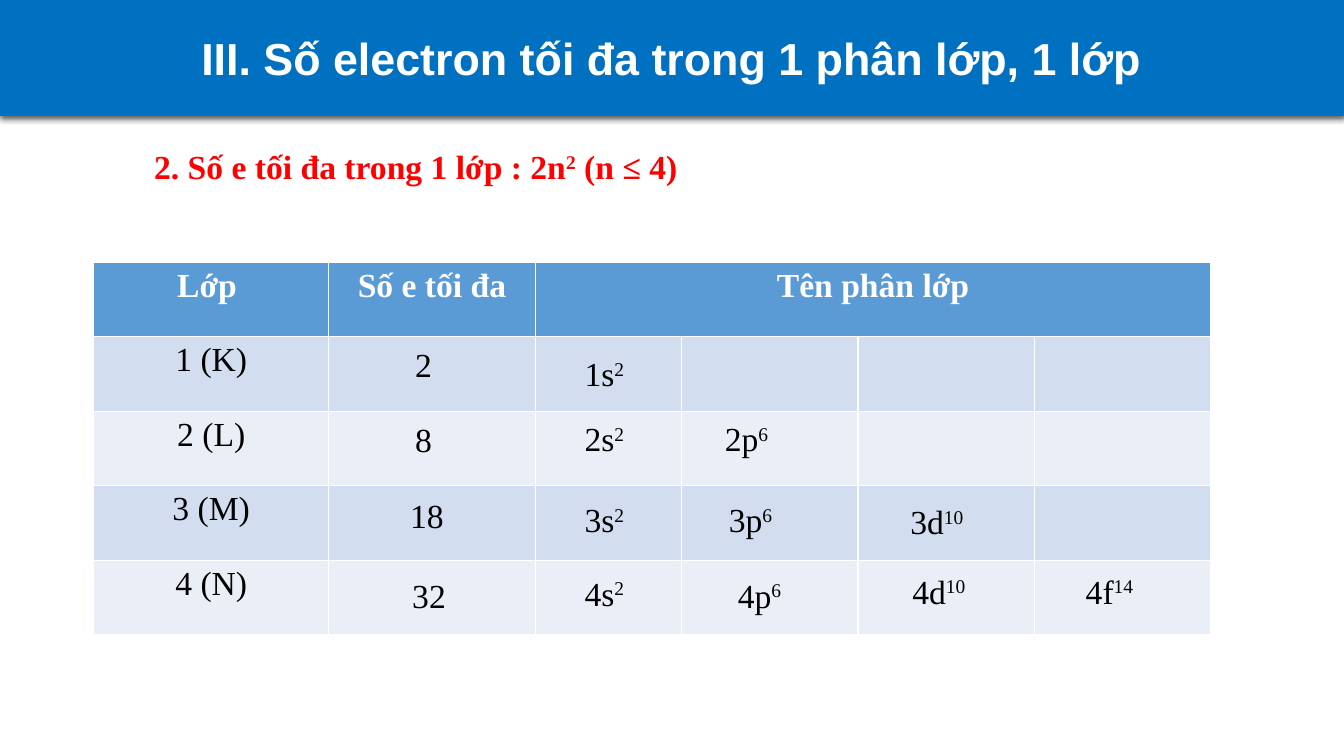
"""Build a slide on the maximum number of electrons in each shell."""
from lxml import etree
from pptx import Presentation
from pptx.dml.color import RGBColor
from pptx.enum.shapes import MSO_SHAPE
from pptx.enum.text import MSO_ANCHOR, MSO_AUTO_SIZE, PP_ALIGN
from pptx.oxml import parse_xml
from pptx.util import Inches, Pt

NS = "http://schemas.openxmlformats.org/drawingml/2006/main"
TIMES = {"name": "Times New Roman", "size": Pt(24), "bold": False}
BOLD = {**TIMES, "bold": True}
TITLE = {"name": "Arial", "size": Pt(32), "bold": True}


def rgb(color):
    return RGBColor.from_string(color)


def write(tf, parts, fmt, color, align=PP_ALIGN.LEFT):
    """Write runs in one paragraph, every second one as a superscript."""
    p = tf.paragraphs[0]
    p.alignment = align
    for i, text in enumerate(parts):
        r = p.add_run()
        r.text = text
        for name, value in fmt.items():
            setattr(r.font, name, value)
        r.font.color.rgb = rgb(color)
        if i % 2:
            r._r.get_or_add_rPr().set("baseline", "30000")


prs = Presentation()
prs.slide_width, prs.slide_height = Inches(13.33), Inches(7.5)
s = prs.slides.add_slide(prs.slide_layouts[6])

bar = s.shapes.add_shape(MSO_SHAPE.RECTANGLE, 0, 0, prs.slide_width, Inches(1.15))
bar.fill.solid()
bar.fill.fore_color.rgb = rgb("0070C0")
bar.line.fill.background()
bar.text_frame.vertical_anchor = MSO_ANCHOR.MIDDLE
bar.text_frame.word_wrap = True
write(bar.text_frame, ["III. Số electron tối đa trong 1 phân lớp, 1 lớp"],
      TITLE, "FFFFFF", PP_ALIGN.CENTER)
effects = etree.SubElement(bar._element.spPr, f"{{{NS}}}effectLst")
effects.append(parse_xml(
    f'<a:outerShdw xmlns:a="{NS}" blurRad="57150" dist="19050" dir="5400000" '
    'algn="ctr" rotWithShape="0"><a:srgbClr val="000000">'
    '<a:alpha val="63000"/></a:srgbClr></a:outerShdw>'))

heading = s.shapes.add_textbox(Inches(1.43), Inches(1.4), Inches(5.51), Inches(0.5))
heading.text_frame.word_wrap = False
heading.text_frame.auto_size = MSO_AUTO_SIZE.SHAPE_TO_FIT_TEXT
write(heading.text_frame, ["2. Số e tối đa trong 1 lớp : 2n", "2", " (n ≤ 4)"],
      BOLD, "FF0000")

widths = [2.33, 2.05, 1.45, 1.75, 1.75, 1.75]
headers = ["Lớp ", "Số e tối đa", "Tên phân lớp"]
shells = ["1 (K)", "2 (L)", "3 (M)", "4 (N)"]
table = s.shapes.add_table(5, 6, Inches(0.93), Inches(2.6),
                           Inches(11.07), Inches(3.7)).table
for column, width in zip(table.columns, widths):
    column.width = Inches(width)
for i, row in enumerate(table.rows):
    row.height = Inches(0.74)
    for cell in row.cells:
        cell.fill.solid()
        cell.fill.fore_color.rgb = rgb(
            "5B9BD5" if i == 0 else "D2DEEF" if i % 2 else "EAEFF7")
table.cell(0, 2).merge(table.cell(0, 5))
for j, text in enumerate(headers):
    write(table.cell(0, j).text_frame, [text], BOLD, "FFFFFF", PP_ALIGN.CENTER)
for i, text in enumerate(shells, 1):
    write(table.cell(i, 0).text_frame, [text], TIMES, "000000", PP_ALIGN.CENTER)

entries = [
    (4.02, 3.36, 1.53, ["2"]),
    (5.7, 3.45, 1.53, ["1s", "2"]),
    (4.02, 4.11, 0.83, ["8"]),
    (5.7, 4.1, 0.83, ["2s", "2"]),
    (7.09, 4.1, 0.83, ["2p", "6"]),
    (3.97, 4.86, 0.83, ["18"]),
    (5.7, 4.9, 0.83, ["3s", "2"]),
    (7.13, 4.9, 0.83, ["3p", "6"]),
    (8.93, 4.92, 0.83, ["3d", "10"]),
    (3.99, 5.65, 0.83, ["32"]),
    (5.7, 5.63, 0.83, ["4s", "2"]),
    (7.22, 5.65, 0.83, ["4p", "6"]),
    (8.95, 5.61, 0.83, ["4d", "10"]),
    (10.67, 5.61, 0.83, ["4f", "14"]),
]
for x, y, width, parts in entries:
    tf = s.shapes.add_textbox(Inches(x), Inches(y), Inches(width), Inches(0.5)).text_frame
    tf.word_wrap = True
    tf.auto_size = MSO_AUTO_SIZE.SHAPE_TO_FIT_TEXT
    write(tf, parts, TIMES, "000000")

prs.save("out.pptx")
